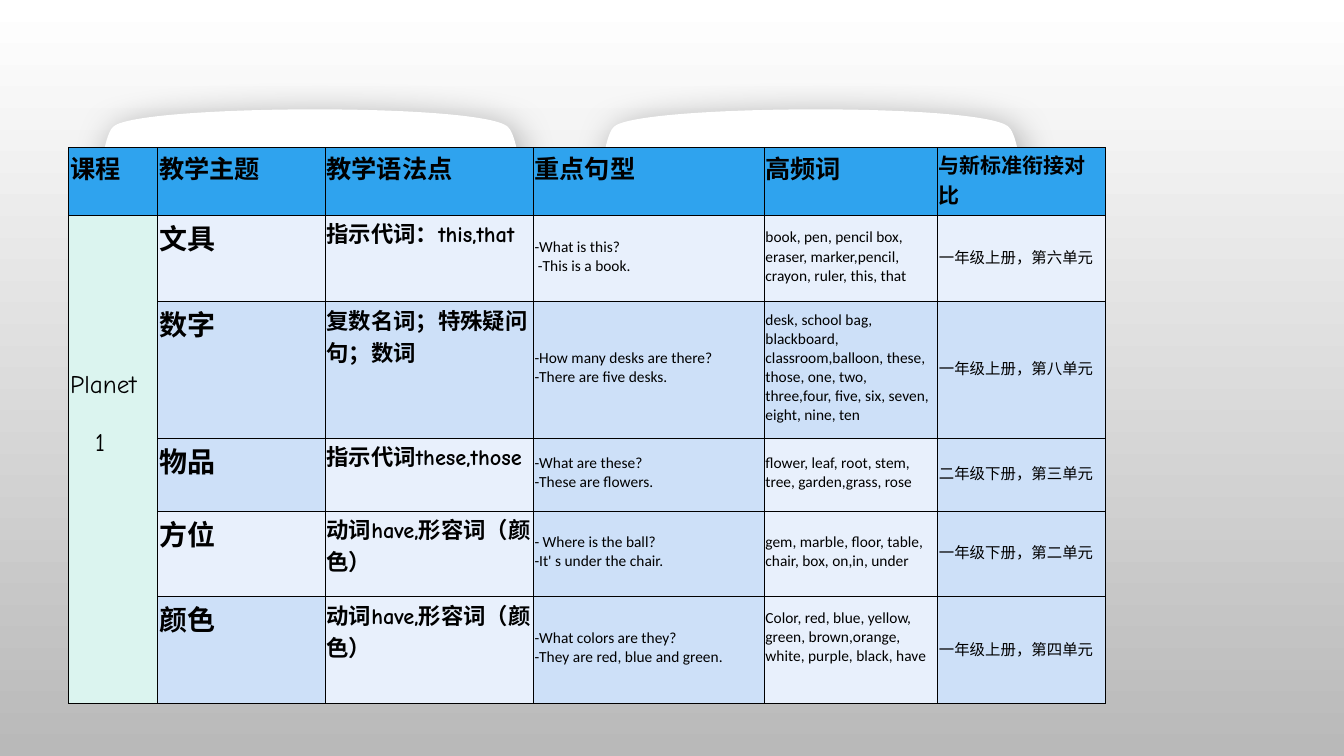
from dataclasses import dataclass
from lxml import etree
from pptx import Presentation
from pptx import util as u
from pptx.dml.color import RGBColor
from pptx.enum import text as t
from pptx.oxml.ns import qn


@dataclass(frozen=True)
class Theme:
    black: str = "000000"
    white: str = "FFFFFF"
    gray: str = "B9B9B9"
    blue: str = "2FA3EE"
    mint: str = "DBF4EF"
    pale: str = "E8F0FC"
    sky: str = "CDE0F8"
    han: str = "Noto Sans CJK SC"
    comic: str = "Comic Neue"
    plain: str = "Calibri"
    topic: int = 20
    head: int = 18
    point: int = 16
    note: int = 15
    small: int = 11


TH = Theme()
COLS = [2.24, 4.22, 5.24, 5.82, 4.37, 4.24]
ROWS = [1.57, 2.18, 3.43, 1.85, 2.15, 2.69]
HEADS = ["课程", "教学主题", "教学语法点", "重点句型", "高频词", "与新标准衔接对比"]
UNITS = [
    ("文具", "指示代词：this,that", ["-What is this?", " -This is a book."],
     "book, pen, pencil box, eraser, marker,pencil, crayon, ruler, this, that",
     "一年级上册，第六单元"),
    ("数字", "复数名词；特殊疑问句；数词",
     ["-How many desks are there?", "-There are five desks."],
     "desk, school bag, blackboard, classroom,balloon, these, those, one, two, "
     "three,four, five, six, seven, eight, nine, ten",
     "一年级上册，第八单元"),
    ("物品", "指示代词|these,those", ["-What are these?", "-These are flowers."],
     "flower, leaf, root, stem, tree, garden,grass, rose",
     "二年级下册，第三单元"),
    ("方位", "动词|have,|形容词（颜色）",
     ["- Where is the ball?", "-It' s under the chair."],
     "gem, marble, floor, table, chair, box, on,in, under",
     "一年级下册，第二单元"),
    ("颜色", "动词|have,|形容词（颜色）",
     ["-What colors are they?", "-They are red, blue and green."],
     "Color, red, blue, yellow, green, brown,orange, white, purple, black, have",
     "一年级上册，第四单元"),
]
P, S = TH.pale, TH.sky
FILLS = [[P] * 5, [S] * 5, [S, P, S, P, S], [P, P, S, P, S], [S, P, S, P, S]]
START = (12.78, 3.18)
KNOTS = [
    (13.54, 3.73), (13.41, 12.98), (12.78, 13.46),
    (12.12, 13.92), (3.61, 14), (2.87, 13.46),
    (2.11, 12.9), (2.16, 3.68), (2.87, 3.18),
    (3.56, 2.64), (11.99, 2.59), START,
]


def rgb(code):
    return RGBColor.from_string(code)


def paint(slide):
    fill = slide.background.fill
    fill.gradient()
    fill.gradient_angle = 270
    for stop, code, spot in zip(fill.gradient_stops, (TH.white, TH.gray), (0, 1)):
        stop.color.rgb = rgb(code)
        stop.position = spot


def bend(card):
    lines = list(card._element.iter(qn("a:lnTo")))
    for first in range(0, len(lines), 3):
        curve = etree.Element(qn("a:cubicBezTo"))
        lines[first].addprevious(curve)
        for line in lines[first:first + 3]:
            curve.append(line[0])
            line.getparent().remove(line)


def add_card(slide, shift):
    dots = [(round((x + shift) * 100), round(y * 100)) for x, y in [START, *KNOTS]]
    pen = slide.shapes.build_freeform(*dots[0], scale=u.Cm(0.01))
    pen.add_line_segments(dots[1:])
    card = pen.convert_to_shape()
    bend(card)
    card.fill.solid()
    card.fill.fore_color.rgb = rgb(TH.white)
    card.line.fill.background()
    card.shadow.inherit = False
    glow = etree.SubElement(card._element.spPr.find(qn("a:effectLst")),
                            qn("a:outerShdw"), blurRad=str(u.Pt(25)),
                            dist=str(u.Pt(5)), dir="2700000", rotWithShape="0")
    tint = etree.SubElement(glow, qn("a:srgbClr"), val=TH.black)
    etree.SubElement(tint, qn("a:alpha"), val="30000")


def write(cell, lines, size, face, bold=False, mid=False, top=0.04, base=0.13):
    cell.margin_left = cell.margin_right = u.Cm(0.04)
    cell.margin_top, cell.margin_bottom = u.Cm(top), u.Cm(base)
    cell.vertical_anchor = t.MSO_ANCHOR.MIDDLE if mid else t.MSO_ANCHOR.TOP
    frame = cell.text_frame
    for i, line in enumerate(lines):
        para = frame.add_paragraph() if i else frame.paragraphs[0]
        for part in line.split("|"):
            run = para.add_run()
            run.text = part
            font = run.font
            font.size, font.bold = u.Pt(size), bold
            font.color.rgb = rgb(TH.black)
            latin = any(c.isascii() for c in part)
            font.name = face if latin else TH.han
            etree.SubElement(run._r.get_or_add_rPr(), qn("a:ea"), typeface=TH.han)


def dress(cell, code):
    cell.fill.solid()
    cell.fill.fore_color.rgb = rgb(code)
    props = cell._tc.get_or_add_tcPr()
    for i, side in enumerate("LRTB"):
        edge = etree.Element(qn("a:ln" + side), w=str(u.Pt(0.5)))
        fill = etree.SubElement(edge, qn("a:solidFill"))
        etree.SubElement(fill, qn("a:srgbClr"), val=TH.black)
        props.insert(i, edge)


def add_grid(slide):
    grid = slide.shapes.add_table(
        len(ROWS), len(COLS), u.Cm(1.73), u.Cm(3.72),
        u.Cm(sum(COLS)), u.Cm(sum(ROWS))).table
    grid.first_row = grid.horz_banding = False
    for col, width in zip(grid.columns, COLS):
        col.width = u.Cm(width)
    for row, height in zip(grid.rows, ROWS):
        row.height = u.Cm(height)
    return grid


def fill_grid(grid):
    for c, head in enumerate(HEADS):
        dress(grid.cell(0, c), TH.blue)
        size = TH.note if c == len(HEADS) - 1 else TH.head
        write(grid.cell(0, c), [head], size, TH.han, bold=True)
    for r, (unit, fills) in enumerate(zip(UNITS, FILLS), 1):
        for c, code in enumerate([TH.mint, *fills]):
            dress(grid.cell(r, c), code)
        topic, point, talk, words, match = unit
        write(grid.cell(r, 1), [topic], TH.topic, TH.han, bold=True)
        write(grid.cell(r, 2), [point], TH.point, TH.comic, bold=True)
        write(grid.cell(r, 3), talk, TH.small, TH.plain, mid=True)
        base = 0.69 if r == len(UNITS) else 0.13
        write(grid.cell(r, 4), [words], TH.small, TH.plain, mid=True, base=base)
        write(grid.cell(r, 5), [match], TH.small, TH.han, mid=True)
    course = grid.cell(1, 0)
    course.merge(grid.cell(len(UNITS), 0))
    write(course, ["Planet", "1"], TH.head, TH.comic, top=3.92)
    level = course.text_frame.paragraphs[1]
    level.space_before = u.Pt(21)
    level._p.get_or_add_pPr().set("marL", str(u.Cm(0.63)))


def main():
    deck = Presentation()
    deck.slide_width, deck.slide_height = u.Cm(33.87), u.Cm(19.05)
    slide = deck.slides.add_slide(deck.slide_layouts[6])
    paint(slide)
    for shift in (0, 12.62):
        add_card(slide, shift)
    fill_grid(add_grid(slide))
    deck.save("out.pptx")


if __name__ == "__main__":
    main()
